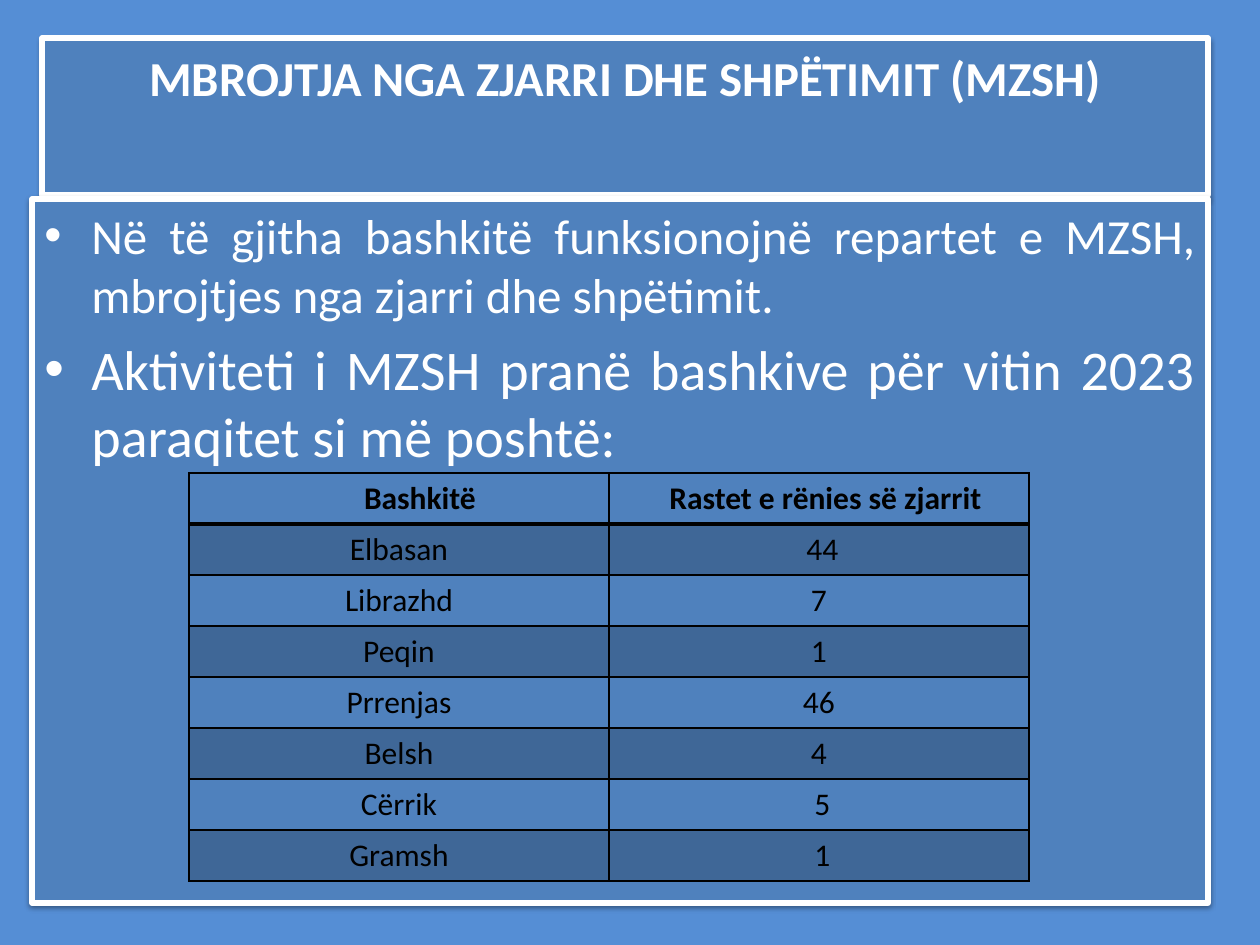
from lxml import etree
from pptx import Presentation
from pptx.dml.color import RGBColor
from pptx.enum.shapes import MSO_SHAPE
from pptx.enum.text import MSO_ANCHOR, PP_ALIGN
from pptx.oxml.ns import qn
from pptx.util import Emu, Pt

RECTANGLE = MSO_SHAPE.RECTANGLE
TOP, MIDDLE = MSO_ANCHOR.TOP, MSO_ANCHOR.MIDDLE
CENTER, JUSTIFY = PP_ALIGN.CENTER, PP_ALIGN.JUSTIFY
FONT = "Calibri"
BACKGROUND, PANEL, WHITE, BLACK = "558ED5", "4F81BD", "FFFFFF", "000000"

TITLE = "MBROJTJA NGA ZJARRI DHE SHPËTIMIT (MZSH)"
POINTS = [
    ("Në të gjitha bashkitë funksionojnë repartet e MZSH, "
     "mbrojtjes nga zjarri dhe shpëtimit.", 28),
    ("Aktiviteti i MZSH pranë bashkive për vitin 2023 "
     "paraqitet si më poshtë:", 32),
]
FIRES = [
    ("Bashkitë", "Rastet e rënies së zjarrit"),
    ("Elbasan", "44"),
    ("Librazhd", "7"),
    ("Peqin", "1"),
    ("Prrenjas", "46"),
    ("Belsh", "4"),
    ("Cërrik", "5"),
    ("Gramsh", "1"),
]
# Extra left margin in px for cells set off-centre, by (row, column)
CELL_SHIFTS = {(0, 0): 42, (0, 1): 13, (1, 1): 7, (6, 1): 7, (7, 1): 7}


def px(length):
    return Emu(round(length * 914400 / 126))


def color(value):
    return RGBColor.from_string(value)


def add_node(parent, tag, **attributes):
    return etree.SubElement(parent, qn(tag), attributes)


def add_span(para, text, size, tint, bold=False):
    span = para.add_run()
    span.text = text
    span.font.name = FONT
    span.font.size = Pt(size)
    span.font.bold = bold
    span.font.color.rgb = color(tint)


def add_panel(page, box):
    """Add a white-edged panel with a soft shadow and return its text frame."""
    panel = page.shapes.add_shape(RECTANGLE, *map(px, box))
    panel.fill.solid()
    panel.fill.fore_color.rgb = color(PANEL)
    panel.line.color.rgb = color(WHITE)
    panel.line.width = Pt(3)
    panel.shadow.inherit = False
    effects = panel._element.spPr.find(qn("a:effectLst"))
    shadow = add_node(effects, "a:outerShdw", blurRad=str(Pt(3.1)),
                      dist=str(Pt(1.6)), dir="5400000", rotWithShape="0")
    shade = add_node(shadow, "a:srgbClr", val=BLACK)
    add_node(shade, "a:alpha", val="38000")
    frame = panel.text_frame
    frame.word_wrap = True
    frame.vertical_anchor = TOP
    return frame


def add_title(page, box):
    frame = add_panel(page, box)
    frame.margin_top = px(10)
    para = frame.paragraphs[0]
    para.alignment = CENTER
    add_span(para, TITLE, 27.9, WHITE, bold=True)


def add_points(page, box):
    frame = add_panel(page, box)
    for index, (text, size) in enumerate(POINTS):
        para = frame.add_paragraph() if index else frame.paragraphs[0]
        para.alignment = JUSTIFY
        para.space_before = Pt(size * 0.2)
        props = para._p.get_or_add_pPr()
        props.set("marL", str(px(47)))
        props.set("indent", str(px(-47)))
        add_node(props, "a:buFont", typeface="Arial")
        add_node(props, "a:buChar", char="•")
        add_span(para, text, size, WHITE)


def set_borders(cell, bottom, top):
    """Draw black borders; they precede the fill in the cell properties."""
    props = cell._tc.get_or_add_tcPr()
    widths = {"a:lnL": 1, "a:lnR": 1, "a:lnT": top, "a:lnB": bottom}
    for place, (tag, width) in enumerate(widths.items()):
        border = etree.Element(qn(tag), w=str(Pt(width)))
        add_node(add_node(border, "a:solidFill"), "a:srgbClr", val=BLACK)
        props.insert(place, border)


def set_fill(cell, banded):
    if not banded:
        cell.fill.background()
        return
    cell.fill.solid()
    cell.fill.fore_color.rgb = color(BLACK)
    shade = cell._tc.tcPr.find(qn("a:solidFill"))[0]
    add_node(shade, "a:alpha", val="20000")


def add_fire_table(page, box):
    left, top, width, height = box
    rows, columns = len(FIRES), len(FIRES[0])
    table = page.shapes.add_table(rows, columns, *map(px, box)).table
    for column in table.columns:
        column.width = px(width / columns)
    for row_index, record in enumerate(FIRES):
        table.rows[row_index].height = px(height / rows)
        for column_index, text in enumerate(record):
            cell = table.cell(row_index, column_index)
            set_fill(cell, banded=row_index % 2 == 1)
            set_borders(cell, bottom=2 if row_index == 0 else 1,
                        top=2 if row_index == 1 else 1)
            cell.vertical_anchor = MIDDLE
            cell.margin_top = cell.margin_bottom = px(5)
            shift = CELL_SHIFTS.get((row_index, column_index), 0)
            cell.margin_left = px(12 + shift)
            cell.margin_right = px(12)
            para = cell.text_frame.paragraphs[0]
            para.alignment = CENTER
            add_span(para, text, 18, BLACK, bold=row_index == 0)


def main():
    deck = Presentation()
    deck.slide_width, deck.slide_height = px(1260), px(945)
    page = deck.slides.add_slide(deck.slide_layouts[6])
    page.background.fill.solid()
    page.background.fill.fore_color.rgb = color(BACKGROUND)
    add_title(page, (42, 38, 1166, 157))
    add_points(page, (32, 199, 1176, 704))
    add_fire_table(page, (189, 473, 840, 408))
    deck.save("out.pptx")


if __name__ == "__main__":
    main()
